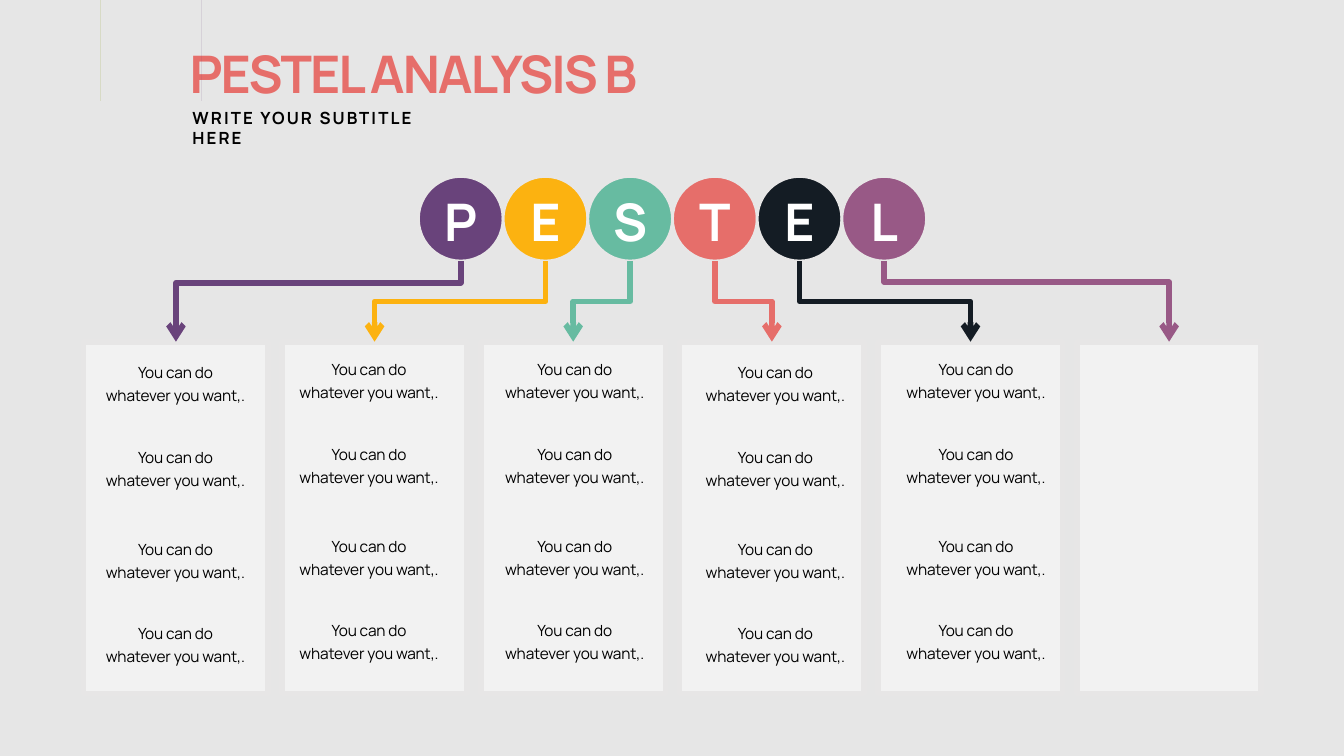
"""Build the PESTEL analysis slide: six lettered circles leading to six text cards."""
from pptx import Presentation
from pptx.dml.color import RGBColor
from pptx.enum.shapes import MSO_CONNECTOR, MSO_SHAPE
from pptx.enum.text import MSO_ANCHOR, MSO_AUTO_SIZE, PP_ALIGN
from pptx.oxml.ns import qn
from pptx.util import Inches, Pt
from lxml.etree import SubElement

COLORS = {
    "purple": "69437B", "yellow": "FCB210", "green": "67BBA1",
    "coral": "E66E6A", "navy": "141C24", "plum": "985986",
    "page": "E6E6E6", "card": "F2F2F2", "edge": "E7E6E6",
    "white": "FFFFFF", "black": "000000",
}


def paint(sp, fill, line_width=0):
    sp.shadow.inherit = False
    sp.fill.solid()
    sp.fill.fore_color.rgb = RGBColor.from_string(COLORS[fill])
    if line_width:
        sp.line.color.rgb = RGBColor.from_string(COLORS["edge"])
        sp.line.width = Pt(line_width)
    else:
        sp.line.fill.background()


def write(tf, text, size, color, bold=False, spacing=0, align=PP_ALIGN.LEFT):
    tf.word_wrap = True
    tf.auto_size = MSO_AUTO_SIZE.NONE
    p = tf.paragraphs[0]
    p.alignment = align
    r = p.add_run()
    r.text = text
    r.font.name = "Manrope"
    r.font.size = Pt(size)
    r.font.bold = bold
    r.font.color.rgb = RGBColor.from_string(COLORS[color])
    r._r.get_or_add_rPr().set("spc", str(spacing))
    return p


prs = Presentation()
prs.slide_width, prs.slide_height = Inches(13.33), Inches(7.5)
s = prs.slides.add_slide(prs.slide_layouts[5])
s.background.fill.solid()
s.background.fill.fore_color.rgb = RGBColor.from_string(COLORS["page"])

title = s.shapes.title
title.left, title.top = Inches(1.78), Inches(0.36)
title.width, title.height = Inches(11.5), Inches(0.72)
title.text_frame.vertical_anchor = MSO_ANCHOR.BOTTOM
write(title.text_frame, "PESTEL ANALYSIS B", 37, "coral", True, -140)

subtitle = s.shapes.add_textbox(Inches(1.81), Inches(1.02), Inches(2.81), Inches(0.3))
write(subtitle.text_frame, "WRITE YOUR SUBTITLE HERE", 12, "black", True, 150)

CHEVRON = [(0.97, 0.9), (1.17, 0.7), (0.97, 0.5), (0.9, 0.58), (1.02, 0.7), (0.9, 0.82)]
for i, color in enumerate(["yellow", "green", "purple"]):
    points = [(x + i * 0.32, y) for x, y in CHEVRON]
    outline = s.shapes.build_freeform(*points[0], scale=Inches(1))
    outline.add_line_segments(points[1:])
    paint(outline.convert_to_shape(), color)

CIRCLE_LEFT, CIRCLE_TOP, CIRCLE = 4.15, 1.75, 0.84
CARD_LEFT, CARD_TOP, CARD_W, CARD_H, CARD_STEP = 0.83, 3.39, 1.83, 3.49, 1.97
ROW_OFFSETS = [0, 0.84, 1.75, 2.59]
FACTORS = [
    ("P", "purple", 0.27, (0.95, 3.51)),
    ("E", "yellow", 0.5, (2.87, 3.48)),
    ("S", "green", 0.5, (4.91, 3.48)),
    ("T", "coral", 0.5, (6.9, 3.51)),
    ("E", "navy", 0.5, (8.89, 3.48)),
    ("L", "plum", 0.26, None),
]

for i, (letter, color, bend, notes_at) in enumerate(FACTORS):
    circle_x = CIRCLE_LEFT + i * CIRCLE
    circle = s.shapes.add_shape(MSO_SHAPE.OVAL, Inches(circle_x), Inches(CIRCLE_TOP),
                                Inches(CIRCLE), Inches(CIRCLE))
    paint(circle, color, 2)
    tf = circle.text_frame
    tf.margin_left = tf.margin_right = tf.margin_bottom = 0
    tf.margin_top = Inches(0.04)
    tf.vertical_anchor = MSO_ANCHOR.MIDDLE
    write(tf, letter, 37, "white", True, -140, PP_ALIGN.CENTER)

    card_x = CARD_LEFT + i * CARD_STEP
    card = s.shapes.add_shape(MSO_SHAPE.RECTANGLE, Inches(card_x), Inches(CARD_TOP),
                              Inches(CARD_W), Inches(CARD_H))
    paint(card, "card", 4)

    x1, y1 = circle_x + CIRCLE / 2, CIRCLE_TOP + CIRCLE
    x2, y2 = card_x + CARD_W / 2, CARD_TOP
    drop, run = y2 - y1, abs(x2 - x1)
    left, top = (x1 + x2 - drop) / 2, (y1 + y2 - run) / 2
    arrow = s.shapes.add_connector(MSO_CONNECTOR.ELBOW, Inches(left), Inches(top),
                                   Inches(left + drop), Inches(top + run))
    arrow.line.color.rgb = RGBColor.from_string(COLORS[color])
    arrow.line.width = Pt(4)
    spPr = arrow._element.spPr
    xfrm = spPr.find(qn("a:xfrm"))
    xfrm.set("rot", "5400000" if x2 < x1 else "16200000")
    if x2 > x1:
        xfrm.set("flipH", "1")
    guide = SubElement(spPr.find(qn("a:prstGeom")).find(qn("a:avLst")), qn("a:gd"))
    guide.set("name", "adj1")
    guide.set("fmla", f"val {round(bend * 100000)}")
    SubElement(spPr.find(qn("a:ln")), qn("a:tailEnd")).set("type", "arrow")
    SubElement(spPr, qn("a:effectLst"))

    if notes_at:
        for offset in ROW_OFFSETS:
            note = s.shapes.add_textbox(Inches(notes_at[0]), Inches(notes_at[1] + offset),
                                        Inches(1.58), Inches(0.8))
            p = write(note.text_frame, "You can do whatever you want,.", 11, "black",
                      spacing=-10, align=PP_ALIGN.CENTER)
            p.line_spacing = Pt(16.5)

prs.save("out.pptx")
